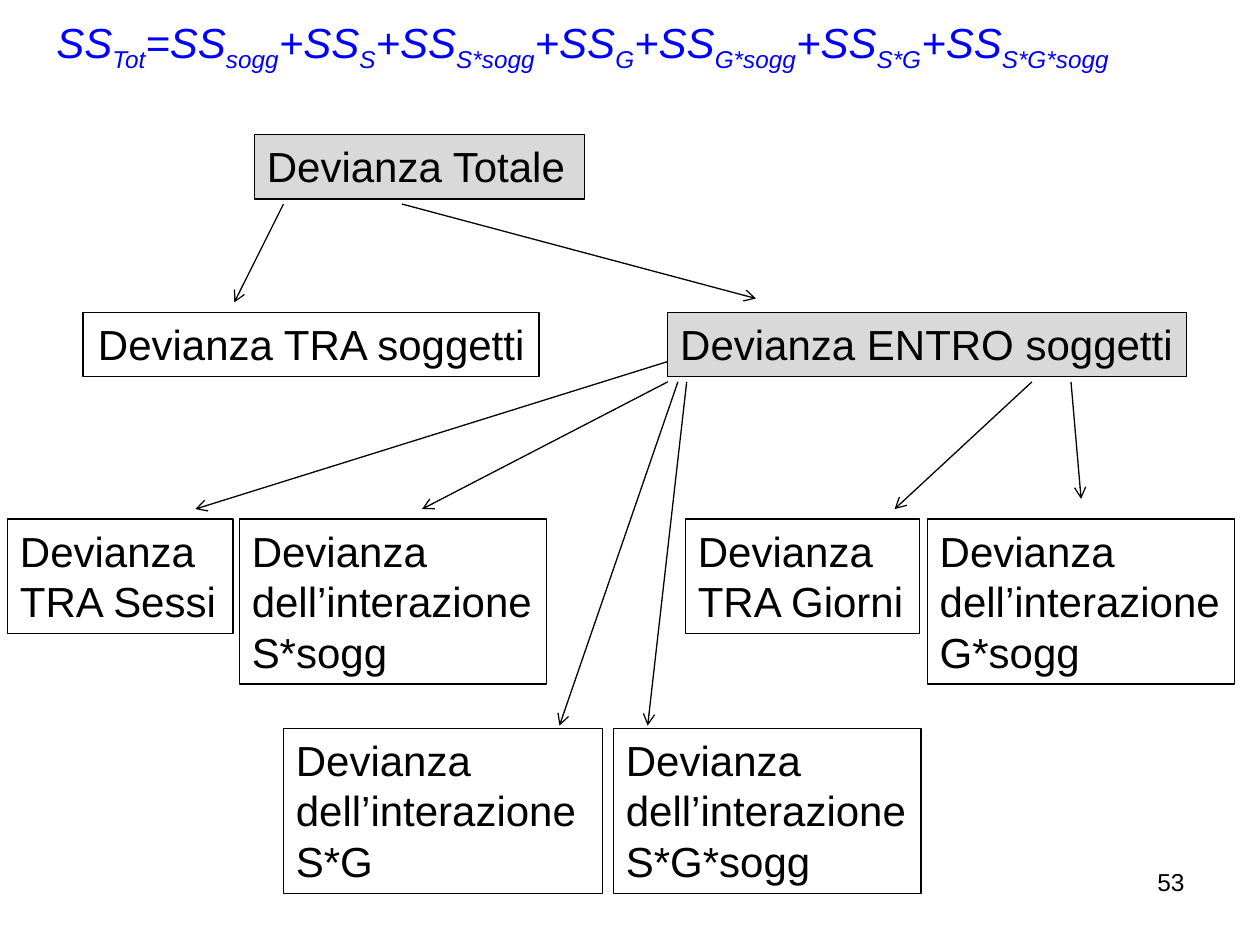
from dataclasses import dataclass

from lxml.etree import SubElement
from pptx import Presentation
from pptx.dml.color import RGBColor
from pptx.enum.shapes import MSO_CONNECTOR, MSO_SHAPE
from pptx.enum.text import MSO_ANCHOR, PP_ALIGN
from pptx.oxml.ns import qn
from pptx.util import Pt

BLACK = RGBColor(0, 0, 0)
BLUE = RGBColor(0, 0, 255)
GREY = RGBColor(217, 217, 217)
FONT = "Arial"
SIZE = 24
LINE = 28.8  # height of one text line
PAD = 7.9  # box height beyond its lines
INK = 0.75

# Rows of the tree
TOP, MID, LOW, END = 77, 178.6, 296.6, 416.2


@dataclass
class Box:
    left: float
    top: float
    width: float
    lines: tuple[str, ...]
    fill: RGBColor | None = None
    align: PP_ALIGN = PP_ALIGN.LEFT


@dataclass
class Arrow:
    start: tuple[float, float]
    end: tuple[float, float]


def cross(term: str) -> tuple[str, ...]:
    return "Devianza", "dell’interazione", term


BOXES = [
    Box(145.4, TOP, 188.6, ("Devianza Totale",), GREY),
    Box(47.5, MID, 260.6, ("Devianza TRA soggetti",), align=PP_ALIGN.CENTER),
    Box(381.6, MID, 296.6, ("Devianza ENTRO soggetti",), GREY),
    Box(4.3, LOW, 128.9, ("Devianza", "TRA Sessi")),
    Box(136.8, LOW, 175.7, cross("S*sogg")),
    Box(391.7, LOW, 133.9, ("Devianza", "TRA Giorni")),
    Box(529.9, LOW, 175.7, cross("G*sogg")),
    Box(162, END, 182.2, cross("S*G")),
    Box(350.6, END, 175.7, cross("S*G*sogg")),
]

ARROWS = [
    # From the total
    Arrow((229.7, 116.6), (432, 170.6)),
    Arrow((162, 116.6), (133.9, 172.8)),
    # From the part within subjects
    Arrow((381.6, 206.6), (111.6, 290.9)),
    Arrow((381.6, 218.2), (241.2, 290.9)),
    Arrow((387.4, 218.2), (319.7, 414.7)),
    Arrow((392.4, 218.2), (370.1, 414.7)),
    Arrow((589.7, 218.2), (511.2, 290.9)),
    Arrow((612, 218.2), (617.8, 285.1)),
]

TERMS = ["sogg", "S", "S*sogg", "G", "G*sogg", "S*G", "S*G*sogg"]


def add_run(para, text: str, size: float = SIZE, color: RGBColor = BLACK):
    run = para.add_run()
    run.text = text
    run.font.name = FONT
    run.font.size = Pt(size)
    run.font.color.rgb = color
    return run


def add_text(slide, left: float, top: float, width: float, height: float):
    area = slide.shapes.add_textbox(Pt(left), Pt(top), Pt(width), Pt(height))
    area.text_frame.word_wrap = True
    return area.text_frame.paragraphs[0]


def add_sum(slide) -> None:
    para = add_text(slide, 25.2, 5.8, 679, 36)
    pairs = [("SS", "Tot")]
    for i, term in enumerate(TERMS):
        pairs.append(("+SS" if i else "=SS", term))
    for base, sub in pairs:
        add_run(para, base, color=BLUE).font.italic = True
        run = add_run(para, sub, color=BLUE)
        run.font.italic = True
        run.font._element.set("baseline", "-25000")


def add_box(slide, box: Box) -> None:
    height = PAD + LINE * len(box.lines)
    shape = slide.shapes.add_shape(
        MSO_SHAPE.RECTANGLE, Pt(box.left), Pt(box.top), Pt(box.width), Pt(height))
    shape.shadow.inherit = False
    shape.line.color.rgb = BLACK
    shape.line.width = Pt(INK)
    if box.fill is None:
        shape.fill.background()
    else:
        shape.fill.solid()
        shape.fill.fore_color.rgb = box.fill
    frame = shape.text_frame
    frame.word_wrap = True
    frame.vertical_anchor = MSO_ANCHOR.TOP
    for i, text in enumerate(box.lines):
        para = frame.add_paragraph() if i else frame.paragraphs[0]
        para.alignment = box.align
        add_run(para, text)


def add_arrow(slide, arrow: Arrow) -> None:
    ends = [Pt(value) for value in arrow.start + arrow.end]
    line = slide.shapes.add_connector(MSO_CONNECTOR.STRAIGHT, *ends)
    line.line.color.rgb = BLACK
    line.line.width = Pt(INK)
    SubElement(line.line._get_or_add_ln(), qn("a:tailEnd"), type="arrow")
    SubElement(line._element.spPr, qn("a:effectLst"))


def main() -> None:
    deck = Presentation()
    deck.slide_width, deck.slide_height = Pt(720), Pt(540)
    slide = deck.slides.add_slide(deck.slide_layouts[6])

    # Sum of squares
    add_sum(slide)

    # Tree
    for box in BOXES:
        add_box(slide, box)
    for arrow in ARROWS:
        add_arrow(slide, arrow)

    # Page number
    para = add_text(slide, 614.9, 491.8, 69.1, 37.4)
    para.alignment = PP_ALIGN.RIGHT
    add_run(para, "53", 14)

    deck.save("out.pptx")


if __name__ == "__main__":
    main()
